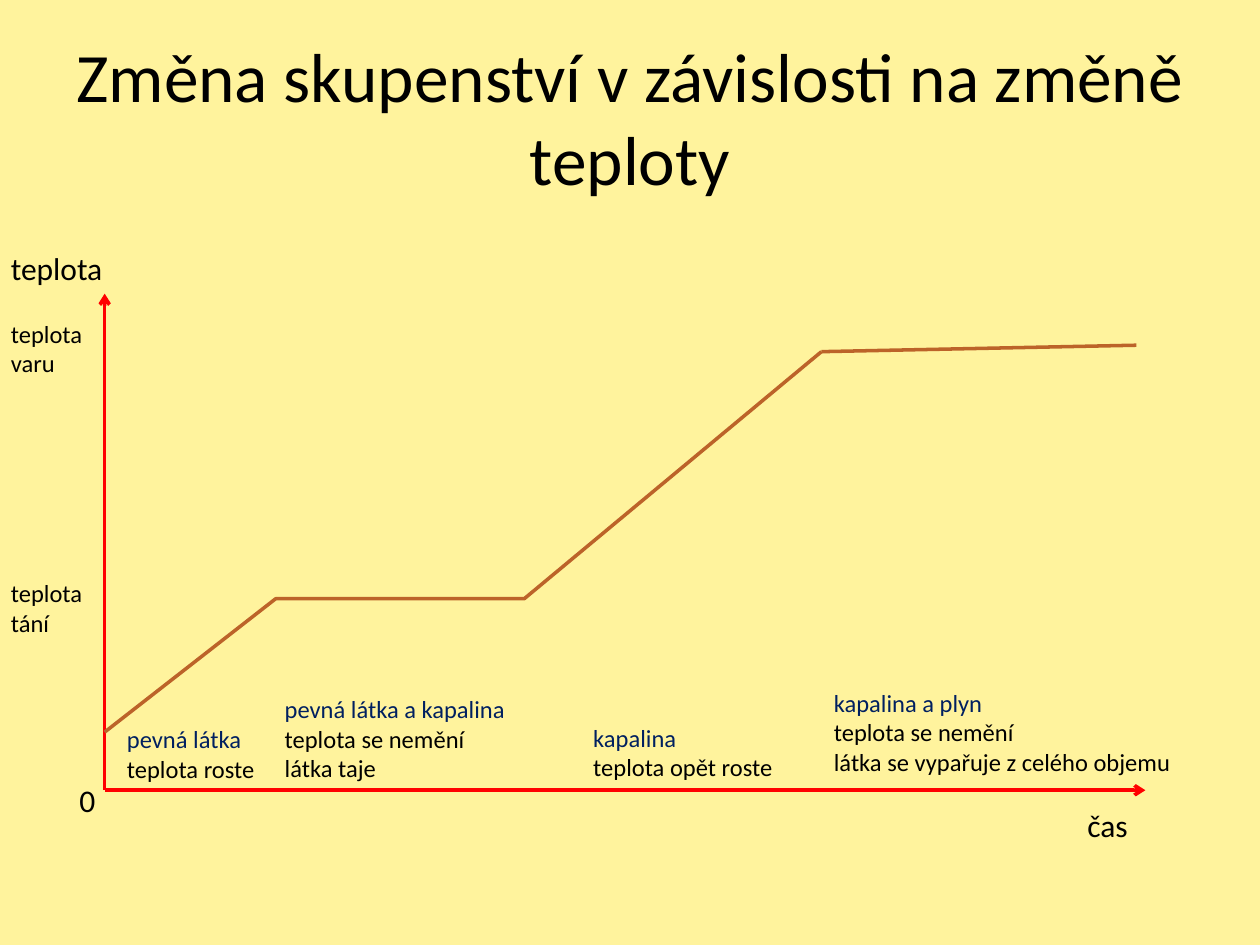
from lxml.etree import SubElement
from pptx import Presentation
from pptx.dml.color import RGBColor
from pptx.enum.shapes import MSO_CONNECTOR
from pptx.enum.text import MSO_ANCHOR, MSO_AUTO_SIZE, PP_ALIGN
from pptx.oxml.ns import qn
from pptx.util import Cm, Pt

CREAM = RGBColor(0xFF, 0xF3, 0x9D)
RED = RGBColor(0xFF, 0x00, 0x00)
BROWN = RGBColor(0xBC, 0x63, 0x29)
NAVY = RGBColor(0x00, 0x20, 0x60)
BLACK = RGBColor(0x00, 0x00, 0x00)


def style_paragraph(paragraph, size, color):
    paragraph.font.name = "Calibri"
    paragraph.font.size = Pt(size)
    paragraph.font.color.rgb = color


def add_label(left, top, width, height, size, lines, first_color=BLACK):
    label = slide.shapes.add_textbox(Cm(left), Cm(top), Cm(width), Cm(height))
    frame = label.text_frame
    frame.word_wrap = False
    frame.auto_size = MSO_AUTO_SIZE.SHAPE_TO_FIT_TEXT
    frame.text = "\n".join(lines)
    for index, paragraph in enumerate(frame.paragraphs):
        style_paragraph(paragraph, size, BLACK if index else first_color)


presentation = Presentation()
presentation.slide_width = Cm(25.4)
presentation.slide_height = Cm(19.05)
slide = presentation.slides.add_slide(presentation.slide_layouts[6])
slide.background.fill.solid()
slide.background.fill.fore_color.rgb = CREAM

title = slide.shapes.add_textbox(Cm(1.27), Cm(0.76), Cm(22.86), Cm(3.18))
title.text_frame.word_wrap = True
title.text_frame.vertical_anchor = MSO_ANCHOR.MIDDLE
title.text_frame.text = "Změna skupenství v závislosti na změně teploty"
heading = title.text_frame.paragraphs[0]
heading.alignment = PP_ALIGN.CENTER
style_paragraph(heading, 39.6, BLACK)

origin_x, origin_y = Cm(2.11), Cm(15.93)
for end_x, end_y in [(Cm(23.09), origin_y), (origin_x, Cm(5.92))]:
    axis = slide.shapes.add_connector(
        MSO_CONNECTOR.STRAIGHT, origin_x, origin_y, end_x, end_y
    )
    axis.line.color.rgb = RED
    axis.line.width = Pt(2)
    SubElement(axis.line._get_or_add_ln(), qn("a:tailEnd"), type="arrow")
    SubElement(axis._element.spPr, qn("a:effectLst"))

boiling_start = (16.56, 7.09)
heating = [(2.11, 14.76), (5.56, 12.07), (10.57, 12.07), boiling_start]
boiling = [boiling_start, (22.91, 6.96)]
for stage in (heating, boiling):
    points = [(Cm(x), Cm(y)) for x, y in stage]
    builder = slide.shapes.build_freeform(*points[0])
    builder.add_line_segments(points[1:], close=False)
    curve = builder.convert_to_shape()
    curve.shadow.inherit = False
    curve.fill.background()
    curve.line.color.rgb = BROWN
    curve.line.width = Pt(2)

add_label(-0.03, 4.9, 2.39, 1.02, 18, ["teplota"])
add_label(21.67, 16.13, 1.35, 1.02, 18, ["čas"])
add_label(1.35, 15.62, 0.84, 1.02, 18, ["0"])

for top, point_name in [(6.3, "varu"), (11.53, "tání")]:
    add_label(-0.03, top, 1.98, 1.45, 14, ["teplota", point_name])

phases = [
    (2.31, 14.48, 3.12, 1.45, ["pevná látka", "teplota roste"]),
    (5.49, 13.87, 5.0, 2.06,
     ["pevná látka a kapalina", "teplota se nemění", "látka taje"]),
    (11.71, 14.45, 4.17, 1.45, ["kapalina", "teplota opět roste"]),
    (16.56, 13.74, 7.37, 2.06,
     ["kapalina a plyn", "teplota se nemění", "látka se vypařuje z celého objemu"]),
]
for left, top, width, height, lines in phases:
    add_label(left, top, width, height, 14, lines, NAVY)

presentation.save("out.pptx")
